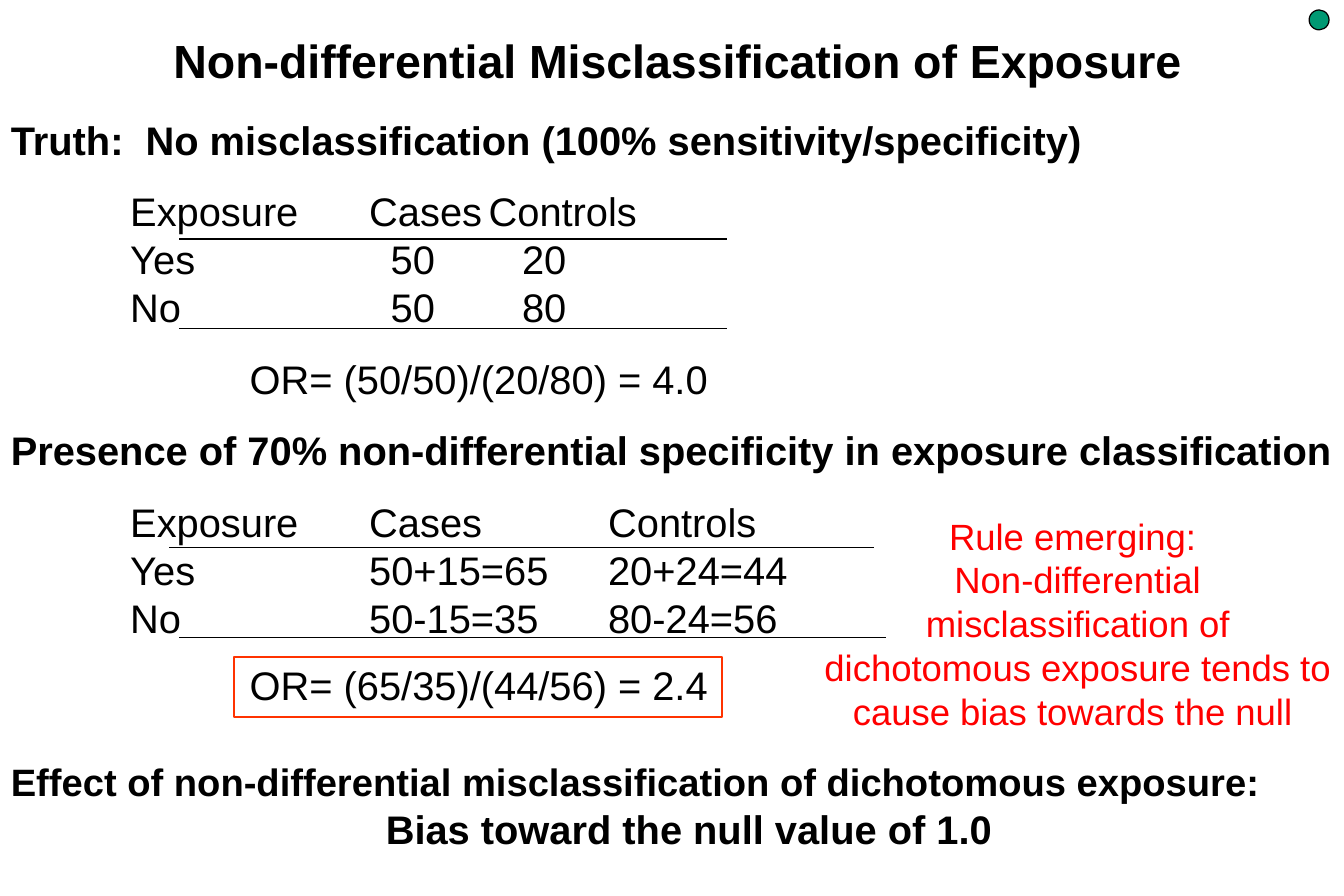
from lxml import etree
from pptx import Presentation
from pptx.dml.color import RGBColor
from pptx.enum.shapes import MSO_CONNECTOR, MSO_SHAPE
from pptx.enum.text import MSO_ANCHOR, PP_ALIGN
from pptx.oxml.ns import qn
from pptx.util import Inches, Pt

LEFT, CENTER = PP_ALIGN.LEFT, PP_ALIGN.CENTER
TOP, MIDDLE = MSO_ANCHOR.TOP, MSO_ANCHOR.MIDDLE
STRAIGHT = MSO_CONNECTOR.STRAIGHT
RECTANGLE, OVAL = MSO_SHAPE.RECTANGLE, MSO_SHAPE.OVAL

COLORS = {"ink": "000000", "rule": "FF0000", "frame": "FF3300", "dot": "009973"}
FONT = "Arial"
WIDTH, HEIGHT = Inches(11.25), Inches(7.5)
COLUMNS, ROWS = 135, 90
LINE_RATIO = 1.2
GAP = 14.4

HEADER_TABS = (1, 3, 4)
COUNT_TABS = (1, 3.18, 4.28)
RECODED_TABS = (1, 3, 5)
RATIO_TABS = (2,)

BODY = [
    ("Truth:  No misclassification (100% sensitivity/specificity)", {"bold": True}),
    ("\tExposure\tCases\tControls", {"tabs": HEADER_TABS, "before": GAP}),
    ("\tYes\t50\t20", {"tabs": COUNT_TABS}),
    ("\tNo\t50\t80", {"tabs": COUNT_TABS}),
    ("\tOR= (50/50)/(20/80) = 4.0", {"tabs": RATIO_TABS, "before": GAP}),
    ("Presence of 70% non-differential specificity in exposure classification",
     {"bold": True, "before": GAP}),
    ("\tExposure\tCases\tControls", {"tabs": RECODED_TABS, "before": GAP}),
    ("\tYes\t50+15=65\t20+24=44", {"tabs": RECODED_TABS}),
    ("\tNo\t50-15=35\t80-24=56", {"tabs": RECODED_TABS}),
    ("\tOR= (65/35)/(44/56) = 2.4", {"tabs": RATIO_TABS, "before": 12}),
    ("Effect of non-differential misclassification of dichotomous exposure:",
     {"bold": True, "size": 23, "before": 28.8}),
    ("Bias toward the null value of 1.0", {"bold": True, "align": CENTER}),
]
EMERGING_RULE = [
    ("Rule emerging: ", {"align": CENTER}),
    ("Non-differential misclassification of dichotomous exposure tends to "
     "cause bias towards the null ", {"align": CENTER}),
]
TABLE_RULES = [(18, 73, 24), (17, 87.8, 55), (18, 73, 33), (18, 89, 64)]


def x(column):
    return int(WIDTH * column / COLUMNS)


def y(row):
    return int(HEIGHT * row / ROWS)


def area(column, row, columns, rows):
    return x(column), y(row), x(columns), y(rows)


def color(name):
    return RGBColor.from_string(COLORS[name])


def set_tabs(paragraph, stops):
    tab_list = etree.SubElement(paragraph._p.get_or_add_pPr(), qn("a:tabLst"))
    for stop in stops:
        etree.SubElement(tab_list, qn("a:tab"), pos=str(Inches(stop)), algn="l")


def write(paragraph, text, ink, pitch, size, bold=False, align=LEFT, before=0, tabs=()):
    paragraph.text = text
    paragraph.alignment = align
    paragraph.line_spacing = Pt(pitch)
    paragraph.space_before = Pt(before)
    if tabs:
        set_tabs(paragraph, tabs)
    font = paragraph.font
    font.name, font.size, font.bold = FONT, Pt(size), bold
    font.color.rgb = color(ink)


def add_text(slide, place, lines, size, ink="ink", anchor=TOP):
    frame = slide.shapes.add_textbox(*area(*place)).text_frame
    frame.word_wrap = True
    frame.vertical_anchor = anchor
    for index, (text, style) in enumerate(lines):
        paragraph = frame.add_paragraph() if index else frame.paragraphs[0]
        write(paragraph, text, ink, size * LINE_RATIO, **{"size": size, **style})


def add_table_rule(slide, start, end, row):
    rule = slide.shapes.add_connector(STRAIGHT, x(start), y(row), x(end), y(row))
    rule.line.color.rgb = color("ink")
    rule.line.width = Pt(0.75)
    etree.SubElement(rule._element.spPr, qn("a:effectLst"))


def add_outline(slide, kind, place, line, width, fill=None):
    outline = slide.shapes.add_shape(kind, *area(*place))
    outline.shadow.inherit = False
    outline.line.color.rgb = color(line)
    outline.line.width = Pt(width)
    if fill:
        outline.fill.solid()
        outline.fill.fore_color.rgb = color(fill)
    else:
        outline.fill.background()


def main():
    deck = Presentation()
    deck.slide_width, deck.slide_height = WIDTH, HEIGHT
    slide = deck.slides.add_slide(deck.slide_layouts[6])
    title = [("Non-differential Misclassification of Exposure",
              {"bold": True, "align": CENTER})]
    add_text(slide, (10.7, 3, 114.7, 6), title, 28, anchor=MIDDLE)
    add_text(slide, (-0.1, 11, 138.6, 76), BODY, 24)
    for start, end, row in TABLE_RULES:
        add_table_rule(slide, start, end, row)
    add_outline(slide, RECTANGLE, (23.5, 66, 49, 6), "frame", 1)
    add_text(slide, (81.5, 51, 53.5, 23.4), EMERGING_RULE, 22, ink="rule")
    add_outline(slide, OVAL, (131.5, 1, 2, 2), "ink", 0.75, fill="dot")
    deck.save("out.pptx")


if __name__ == "__main__":
    main()
